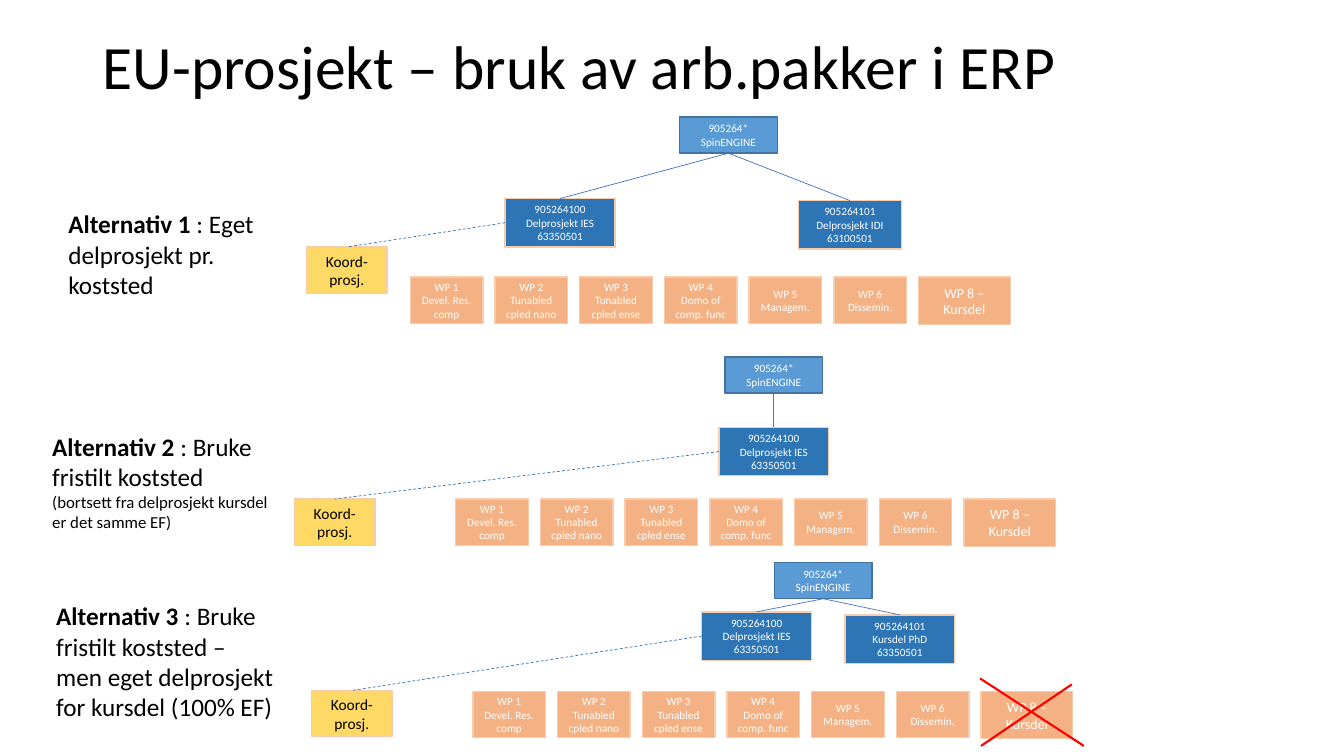
from pptx import Presentation
from pptx.dml.color import RGBColor
from pptx.enum.dml import MSO_LINE
from pptx.enum.shapes import MSO_CONNECTOR, MSO_SHAPE
from pptx.enum.text import MSO_ANCHOR, PP_ALIGN
from pptx.oxml.ns import qn
from pptx.util import Inches, Pt
from lxml import etree

RECTANGLE = MSO_SHAPE.RECTANGLE
STRAIGHT = MSO_CONNECTOR.STRAIGHT
DASH = MSO_LINE.DASH
MIDDLE = MSO_ANCHOR.MIDDLE
CENTER = PP_ALIGN.CENTER
TOP, LEFT, BOTTOM = 0, 1, 2

BLACK = RGBColor(0x00, 0x00, 0x00)
WHITE = RGBColor(0xFF, 0xFF, 0xFF)
RED = RGBColor(0xFF, 0x00, 0x00)
LIGHT_BLUE = RGBColor(0x5B, 0x9B, 0xD5)
EDGE_BLUE = RGBColor(0x43, 0x73, 0x9E)
LINE_BLUE = RGBColor(0x44, 0x72, 0xC4)
DARK_BLUE = RGBColor(0x2E, 0x75, 0xB6)
ORANGE = RGBColor(0xF4, 0xB1, 0x83)
PEACH = RGBColor(0xF8, 0xCB, 0xAD)
YELLOW = RGBColor(0xFF, 0xD9, 0x66)

WORK_PACKAGES = [
    "WP 1\vDevel. Res.\vcomp",
    "WP 2\vTunabled\vcpled nano",
    "WP 3\vTunabled\vcpled ense",
    "WP 4\vDomo of\vcomp. func",
    "WP 5\vManagem.",
    "WP 6\vDissemin.",
]
PACKAGE_PITCH = 0.84
IES = "905264100\nDelprosjekt IES\n63350501"
IDI = "905264101\nDelprosjekt IDI\n63100501"
PHD = "905264101\nKursdel PhD\n63350501"

ALTERNATIVES = [
    {
        "label": (0.58, 2.02, 1.01),
        "text": ("Alternativ 1 ", ": Eget delprosjekt pr. koststed", ""),
        "project": (6.74, 1.16),
        "subprojects": [(5.01, 1.97, 1.09, IES), (7.92, 1.99, 1.02, IDI)],
        "coordination": (3.04, 2.45),
        "packages": (4.07, 2.75),
    },
    {
        "label": (0.42, 4.23, 1.11),
        "text": ("Alternativ 2 ", ": Bruke fristilt koststed ",
                 "(bortsett fra delprosjekt kursdel er det samme EF)"),
        "project": (7.19, 3.54),
        "subprojects": [(7.13, 4.24, 1.09, IES)],
        "coordination": (2.92, 4.95),
        "packages": (4.52, 4.95),
    },
    {
        "label": (0.46, 5.91, 1.31),
        "text": ("Alternativ 3 ", ": Bruke fristilt koststed – men eget "
                 "delprosjekt for kursdel (100% EF)", ""),
        "project": (7.68, 5.58),
        "subprojects": [(6.96, 6.07, 1.09, IES), (8.38, 6.1, 1.09, PHD)],
        "coordination": (3.09, 6.85),
        "packages": (4.69, 6.86),
    },
]


class ProjectSlide:
    """Draws project structures on one slide in a shared style."""

    def __init__(self, slide, font_name="Calibri"):
        self.shapes = slide.shapes
        self.font_name = font_name

    def style(self, paragraph, size, color):
        paragraph.font.name = self.font_name
        paragraph.font.size = Pt(size)
        paragraph.font.color.rgb = color

    def text_box(self, left, top, width, height):
        shape = self.shapes.add_textbox(
            Inches(left), Inches(top), Inches(width), Inches(height))
        shape.text_frame.word_wrap = True
        return shape.text_frame

    def title(self, text):
        frame = self.text_box(0.92, 0.24, 11.5, 0.9)
        frame.vertical_anchor = MIDDLE
        paragraph = frame.paragraphs[0]
        paragraph.text = text
        paragraph.line_spacing = 0.9
        self.style(paragraph, 44, BLACK)

    def label(self, left, top, height, heading, body, note):
        paragraph = self.text_box(left, top, 2.37, height).paragraphs[0]
        self.style(paragraph, 18, BLACK)
        run = paragraph.add_run()
        run.text = heading
        run.font.bold = True
        paragraph.add_run().text = body
        if note:
            paragraph.add_line_break()
            run = paragraph.add_run()
            run.text = note
            run.font.size = Pt(12)

    def box(self, left, top, width, height, text, fill, edge=PEACH,
            size=8, color=WHITE, inset=0.1):
        shape = self.shapes.add_shape(
            RECTANGLE, Inches(left), Inches(top), Inches(width), Inches(height))
        shape.shadow.inherit = False
        shape.fill.solid()
        shape.fill.fore_color.rgb = fill
        shape.line.color.rgb = edge
        shape.line.width = Pt(1)
        frame = shape.text_frame
        frame.word_wrap = True
        frame.vertical_anchor = MIDDLE
        frame.margin_left = frame.margin_right = Inches(inset)
        frame.text = text
        for paragraph in frame.paragraphs:
            paragraph.alignment = CENTER
            self.style(paragraph, size, color)
        return shape

    def line(self, start=(0, 0), end=(0, 0), color=LINE_BLUE, width=0.5):
        connector = self.shapes.add_connector(
            STRAIGHT, *(Inches(value) for value in (*start, *end)))
        connector.line.color.rgb = color
        connector.line.width = Pt(width)
        etree.SubElement(connector._element.spPr, qn("a:effectLst"))
        return connector

    def join(self, first, first_side, second, second_side, color=LINE_BLUE):
        connector = self.line(color=color)
        connector.begin_connect(first, first_side)
        connector.end_connect(second, second_side)
        return connector

    def packages(self, left, top):
        for index, text in enumerate(WORK_PACKAGES):
            self.box(left + index * PACKAGE_PITCH, top, 0.72, 0.46, text,
                     ORANGE, inset=0.05)
        self.box(left + len(WORK_PACKAGES) * PACKAGE_PITCH, top, 0.91, 0.47,
                 "WP 8 – Kursdel", ORANGE, size=10)

    def alternative(self, plan):
        self.label(*plan["label"], *plan["text"])
        project = self.box(*plan["project"], 0.97, 0.36,
                           "905264*\nSpinENGINE", LIGHT_BLUE, EDGE_BLUE)
        subprojects = [
            self.box(left, top, width, 0.48, text, DARK_BLUE)
            for left, top, width, text in plan["subprojects"]
        ]
        for subproject in subprojects:
            self.join(project, BOTTOM, subproject, TOP)
        coordination = self.box(*plan["coordination"], 0.8, 0.46,
                                "Koord-prosj.", YELLOW, size=11, color=BLACK)
        link = self.join(subprojects[0], LEFT, coordination, TOP, DARK_BLUE)
        link.line.dash_style = DASH
        self.packages(*plan["packages"])


def main():
    presentation = Presentation()
    presentation.slide_width = Inches(13.33)
    presentation.slide_height = Inches(7.5)
    slide = presentation.slides.add_slide(presentation.slide_layouts[6])
    project_slide = ProjectSlide(slide)
    project_slide.title("EU-prosjekt – bruk av arb.pakker i ERP")
    for plan in ALTERNATIVES:
        project_slide.alternative(plan)
    project_slide.line((9.72, 6.73), (10.75, 7.4), RED, 1.5)
    project_slide.line((9.73, 7.4), (10.63, 6.79), RED, 1.5)
    presentation.save("out.pptx")


if __name__ == "__main__":
    main()
